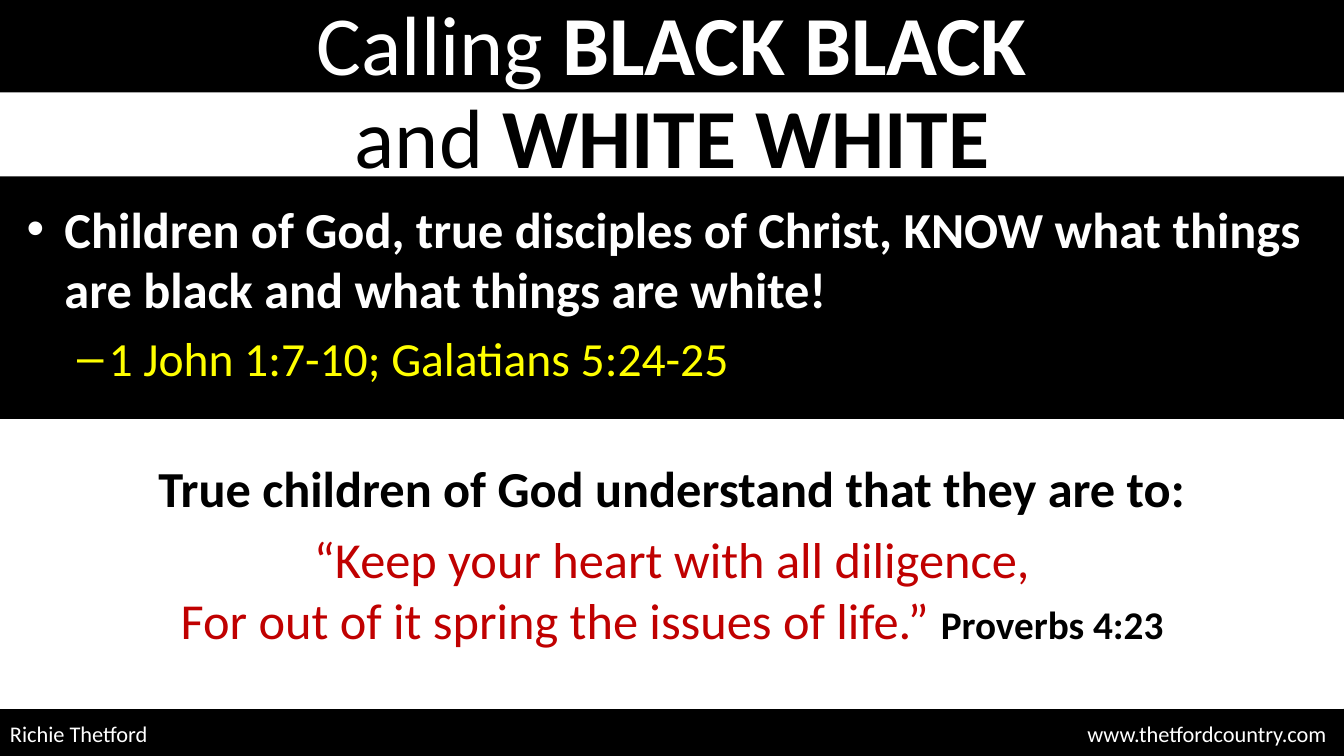
from lxml.etree import SubElement as Sub
from pptx import Presentation
from pptx.dml.color import RGBColor as RGB
from pptx.enum.shapes import MSO_SHAPE as Geo
from pptx.enum.text import MSO_ANCHOR as Anchor, MSO_AUTO_SIZE as Fit, PP_ALIGN as Align
from pptx.oxml.ns import qn
from pptx.util import Pt

BLACK = RGB(0x00, 0x00, 0x00)
WHITE = RGB(0xFF, 0xFF, 0xFF)
YELLOW = RGB(0xFF, 0xFF, 0x00)
RED = RGB(0xC0, 0x00, 0x00)

WIDE, HIGH = 960, 540


class Deck:
    font = "Calibri"

    def __init__(self):
        self.prs = Presentation()
        self.prs.slide_width, self.prs.slide_height = Pt(WIDE), Pt(HIGH)
        self.slide = self.prs.slides.add_slide(self.prs.slide_layouts[5])
        back = self.slide.background.fill
        back.solid()
        back.fore_color.rgb = BLACK

    def title(self, top, high):
        shape = self.slide.shapes.title
        shape.left, shape.top, shape.width, shape.height = Pt(0), Pt(top), Pt(WIDE), Pt(high)
        return self.frame(shape, Anchor.MIDDLE)

    def band(self, top, high, line=None):
        shape = self.slide.shapes.add_shape(Geo.RECTANGLE, Pt(0), Pt(top), Pt(WIDE), Pt(high))
        shape.shadow.inherit = False
        shape.fill.solid()
        shape.fill.fore_color.rgb = WHITE
        if line:
            shape.line.color.rgb = WHITE
            shape.line.width = Pt(line)
        else:
            shape.line.fill.background()
        return self.frame(shape, Anchor.MIDDLE)

    def box(self, left, top, wide, high):
        shape = self.slide.shapes.add_textbox(Pt(left), Pt(top), Pt(wide), Pt(high))
        return self.frame(shape, Anchor.TOP)

    def frame(self, shape, anchor):
        frame = shape.text_frame
        frame.word_wrap = True
        frame.auto_size = Fit.NONE
        frame.vertical_anchor = anchor
        return frame

    def para(self, frame, text, size, color, bold=False, align=Align.CENTER):
        para = frame.paragraphs[0]
        if para.runs:
            para = frame.add_paragraph()
        para.alignment = align
        para.add_run().text = text
        self.style(para.font, size, color, bold)
        return para

    def style(self, font, size, color, bold):
        font.name, font.size, font.bold = self.font, Pt(size), bold
        font.color.rgb = color

    def run(self, para, text, size, color):
        run = para.add_run()
        run.text = text
        self.style(run.font, size, color, True)

    def bullet(self, para, mark, left, hang, level=0):
        para.level = level
        para.space_before = Pt(7)
        props = para._p.get_or_add_pPr()
        props.set("marL", str(Pt(left)))
        props.set("indent", str(-Pt(hang)))
        char = Sub(props, qn("a:buChar"), char=mark)
        font = Sub(props, qn("a:buFont"), typeface="Arial")
        char.addprevious(font)
        self.tail(props)

    def tab(self, para, pos):
        props = para._p.get_or_add_pPr()
        tabs = Sub(props, qn("a:tabLst"))
        Sub(tabs, qn("a:tab"), pos=str(Pt(pos)), algn="r")
        self.tail(props)

    def tail(self, props):
        # The font defaults must close the paragraph properties
        props.append(props.find(qn("a:defRPr")))


def main():
    deck = Deck()

    # Heading: white on black, then black on white
    head = deck.para(deck.title(0, 60), "Calling ", 60, WHITE)
    deck.run(head, "BLACK BLACK", 60, WHITE)
    head = deck.para(deck.band(66, 60), "and ", 60, BLACK)
    deck.run(head, "WHITE WHITE", 60, BLACK)

    # Main point and its references
    body = deck.box(12, 138, 936, 252)
    point = deck.para(body, "Children of God, true disciples of Christ, KNOW what things "
                      "are black and what things are white!", 36, WHITE, True, Align.LEFT)
    deck.bullet(point, "•", 27, 27)
    verse = deck.para(body, "1 John 1:7-10; Galatians 5:24-25", 34, YELLOW, align=Align.LEFT)
    deck.bullet(verse, "–", 58.5, 22.5, 1)

    # White panel with the quotation
    deck.band(300, 206, 0.75)
    deck.para(deck.box(0, 323, WIDE, 51),
              "True children of God understand that they are to:", 36, BLACK, True)
    quote = deck.box(0, 374, WIDE, 94)
    deck.para(quote, "“Keep your heart with all diligence,", 36, RED)
    last = deck.para(quote, "For out of it spring the issues of life.” ", 36, RED)
    deck.run(last, "Proverbs 4:23", 28, BLACK)

    # Footer: name at left, address at a right tab
    foot = deck.para(deck.box(0, 511, WIDE, 27),
                     "Richie Thetford\twww.thetfordcountry.com", 16, WHITE, align=Align.LEFT)
    deck.tab(foot, 940.5)

    deck.prs.save("out.pptx")


if __name__ == "__main__":
    main()
